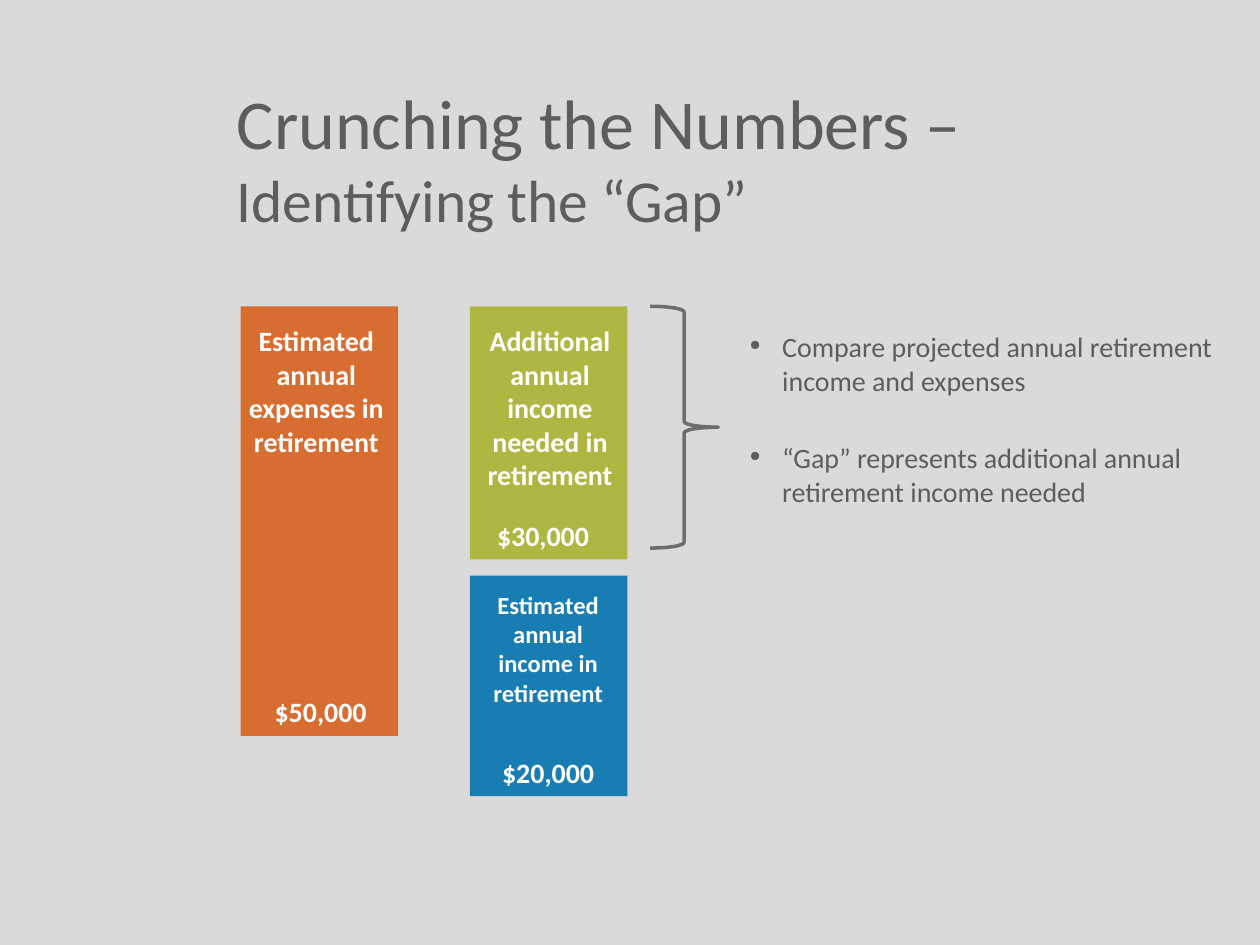
from dataclasses import dataclass

from lxml import etree
from pptx import Presentation
from pptx import util as u
from pptx.dml.color import RGBColor
from pptx.enum import shapes, text
from pptx.oxml.ns import qn


@dataclass(frozen=True)
class Theme:
    font: str = "Calibri"
    backdrop: str = "DADADA"
    ink: str = "5D5D5D"
    reverse: str = "FFFFFF"
    brace: str = "6D6D6D"
    expenses: str = "D76D31"
    gap: str = "AFB743"
    income: str = "177DB3"
    title: float = 40
    subtitle: float = 34
    body: float = 16
    small: float = 14


@dataclass(frozen=True)
class Box:
    left: float
    top: float
    width: float
    height: float

    def lengths(self) -> tuple:
        return tuple(u.Pt(n) for n in (self.left, self.top, self.width, self.height))


@dataclass(frozen=True)
class Bar:
    frame: Box
    color: str
    label: str
    label_box: Box
    label_size: float
    amount: str
    amount_box: Box


THEME = Theme()
BAR_WIDTH = 90
BARS_TOP = 175
AMOUNT_HEIGHT = 26.6

BARS = (
    Bar(Box(137.5, BARS_TOP, BAR_WIDTH, 245.5), THEME.expenses,
        "Estimated annual expenses in retirement", Box(128.2, 181.4, 105.1, 85), THEME.body,
        "$50,000", Box(139.7, 393.1, 87.1, AMOUNT_HEIGHT)),
    Bar(Box(268.5, BARS_TOP, BAR_WIDTH, 144.7), THEME.gap,
        "Additional annual income needed in retirement", Box(267.1, 181.4, 94.3, 104.4), THEME.body,
        "$30,000", Box(276.5, 293, 67.7, AMOUNT_HEIGHT)),
    Bar(Box(268.5, 329, BAR_WIDTH, 126), THEME.income,
        "Estimated annual income in retirement", Box(272.2, 333.4, 82.1, 74.9), THEME.small,
        "$20,000", Box(279.4, 428.4, 67.7, AMOUNT_HEIGHT)),
)
BRACE = Box(371.5, BARS_TOP, 38.9, 138.2)
TITLE = Box(128.2, 41.8, 569.5, 95.8)
POINTS = (
    ("Compare projected annual retirement income and expenses", Box(421.2, 185, 289.4, 57.6)),
    ("“Gap” represents additional annual retirement income needed", Box(421.2, 248.4, 289.4, 66.2)),
)


def style(font, size: float, color: str, bold: bool = False) -> None:
    """Apply the theme font with the given size and colour."""
    font.name = THEME.font
    font.size = u.Pt(size)
    font.bold = bold
    font.color.rgb = RGBColor.from_string(color)


def add_text(slide, box: Box, wrap: bool = True):
    """Add an empty text box and return its text frame."""
    frame = slide.shapes.add_textbox(*box.lengths()).text_frame
    frame.word_wrap = wrap
    return frame


def add_title(slide) -> None:
    """Add the two-line heading."""
    frame = add_text(slide, TITLE)
    frame.vertical_anchor = text.MSO_ANCHOR.MIDDLE
    heading = frame.paragraphs[0]
    main = heading.add_run()
    main.text = "Crunching the Numbers – "
    style(main.font, THEME.title, THEME.ink)
    heading.add_line_break()
    subtitle = heading.add_run()
    subtitle.text = "Identifying the “Gap”"
    style(subtitle.font, THEME.subtitle, THEME.ink)


def add_caption(slide, words: str, box: Box, size: float, wrap: bool) -> None:
    """Add centred bold lettering over a bar."""
    caption = add_text(slide, box, wrap).paragraphs[0]
    caption.text = words
    caption.alignment = text.PP_ALIGN.CENTER
    style(caption.font, size, THEME.reverse, bold=True)


def add_bar(slide, bar: Bar) -> None:
    """Add a coloured bar with its label and amount."""
    block = slide.shapes.add_shape(shapes.MSO_SHAPE.RECTANGLE, *bar.frame.lengths())
    block.shadow.inherit = False
    block.fill.solid()
    block.fill.fore_color.rgb = RGBColor.from_string(bar.color)
    block.line.fill.background()
    add_caption(slide, bar.label, bar.label_box, bar.label_size, True)
    add_caption(slide, bar.amount, bar.amount_box, THEME.body, False)


def add_brace(slide) -> None:
    """Add the brace that marks the gap."""
    brace = slide.shapes.add_shape(shapes.MSO_SHAPE.RIGHT_BRACE, *BRACE.lengths())
    brace.shadow.inherit = False
    brace.fill.background()
    brace.line.color.rgb = RGBColor.from_string(THEME.brace)
    brace.line.width = u.Pt(2)


def add_point(slide, words: str, box: Box) -> None:
    """Add one bulleted remark."""
    point = add_text(slide, box).paragraphs[0]
    point.text = words
    point.space_after = u.Pt(12)
    properties = point._p.get_or_add_pPr()
    indent = u.Pt(18.7)
    properties.set("marL", str(indent))
    properties.set("indent", str(-indent))
    bullet_color = etree.SubElement(properties, qn("a:buClr"))
    etree.SubElement(bullet_color, qn("a:srgbClr"), val=THEME.ink)
    etree.SubElement(properties, qn("a:buSzPct"), val="50000")
    etree.SubElement(properties, qn("a:buChar"), char="●")
    style(point.font, THEME.body, THEME.ink)


def main() -> None:
    """Build and save the slide."""
    deck = Presentation()
    deck.slide_width, deck.slide_height = u.Pt(720), u.Pt(540)
    slide = deck.slides.add_slide(deck.slide_layouts[6])
    slide.background.fill.solid()
    slide.background.fill.fore_color.rgb = RGBColor.from_string(THEME.backdrop)
    add_title(slide)
    for bar in BARS:
        add_bar(slide, bar)
    add_brace(slide)
    for words, box in POINTS:
        add_point(slide, words, box)
    deck.save("out.pptx")


if __name__ == "__main__":
    main()
